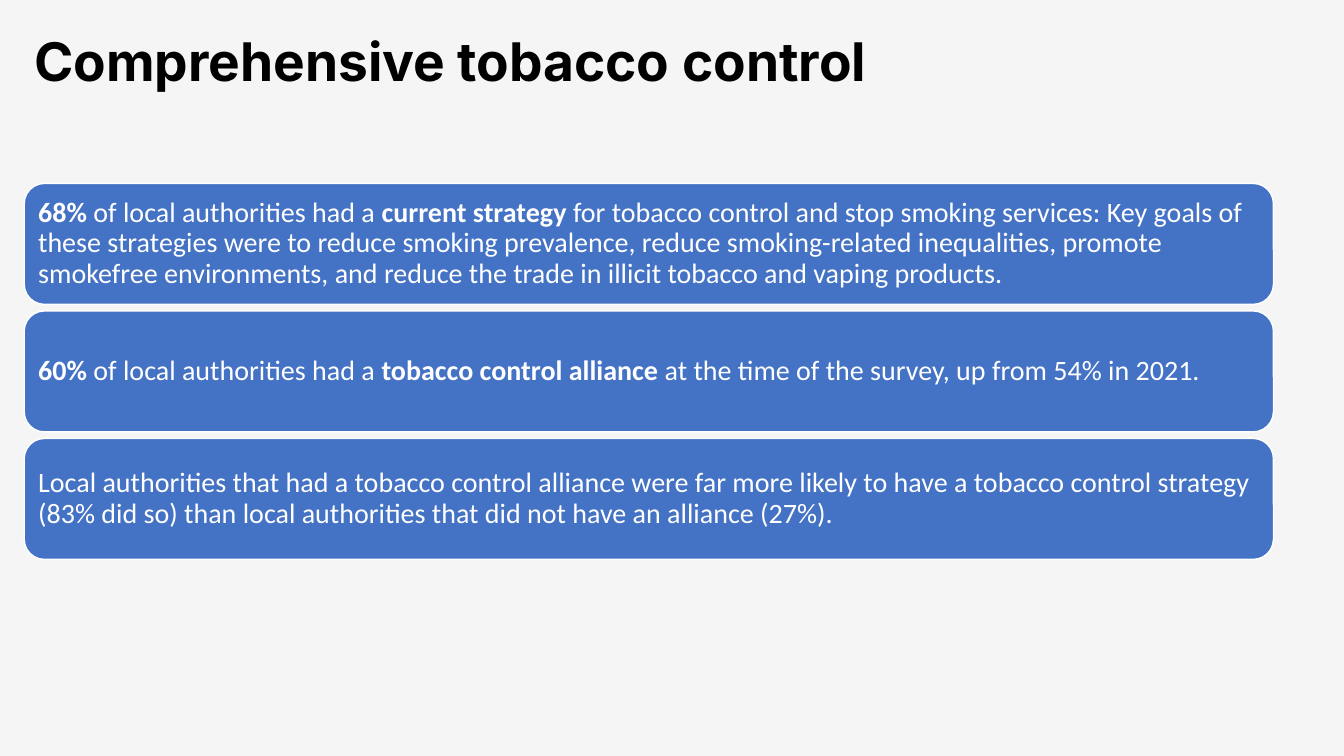
from dataclasses import dataclass

from pptx import Presentation, util as u
from pptx.dml import color
from pptx.enum import shapes, text


@dataclass(frozen=True)
class Theme:
    back: str = "F5F5F5"
    ink: str = "000000"
    card: str = "4472C4"
    light: str = "FFFFFF"
    head: str = "Inter"
    body: str = "Calibri"
    large: int = 38
    small: int = 20


@dataclass(frozen=True)
class Run:
    words: str
    bold: bool = False


@dataclass(frozen=True)
class Card:
    runs: tuple[Run, ...]


THEME = Theme()

# Card geometry, in inches
LEFT, WIDE, HIGH = 0.24, 12.39, 1.2
FIRST, LAST = 1.82, 4.35

CARDS = (
    Card((
        Run("68% ", True),
        Run("of local authorities had a "),
        Run("current strategy ", True),
        Run("for tobacco control and stop smoking services: Key goals of these "
            "strategies were to reduce smoking prevalence, reduce smoking-related "
            "inequalities, promote smokefree environments, and reduce the trade in "
            "illicit tobacco and vaping products."),
    )),
    Card((
        Run("60% ", True),
        Run("of local authorities had a "),
        Run("tobacco control alliance ", True),
        Run("at the time of the survey, up from 54% in 2021."),
    )),
    Card((
        Run("Local authorities that had a tobacco control alliance were far more "
            "likely to have a tobacco control strategy (83% did so) than local "
            "authorities that did not have an alliance (27%)."),
    )),
)


def rgb(code: str) -> color.RGBColor:
    return color.RGBColor.from_string(code)


def write(shape, runs: tuple[Run, ...], *, font: str, size: int, ink: str,
          inset: tuple[float, float]) -> None:
    """Fill a shape with one left-aligned, vertically centred paragraph."""
    frame = shape.text_frame
    frame.word_wrap = True
    frame.vertical_anchor = text.MSO_ANCHOR.MIDDLE
    frame.margin_left = frame.margin_right = u.Inches(inset[0])
    frame.margin_top = frame.margin_bottom = u.Inches(inset[1])
    para = frame.paragraphs[0]
    para.alignment = text.PP_ALIGN.LEFT
    para.line_spacing = 0.9
    for run in runs:
        part = para.add_run()
        part.text = run.words
        part.font.name = font
        part.font.size = u.Pt(size)
        part.font.bold = run.bold
        part.font.color.rgb = rgb(ink)


def draw(slide, card: Card, top: float) -> None:
    box = slide.shapes.add_shape(
        shapes.MSO_SHAPE.ROUNDED_RECTANGLE,
        u.Inches(LEFT), u.Inches(top), u.Inches(WIDE), u.Inches(HIGH))
    box.shadow.inherit = False
    box.fill.solid()
    box.fill.fore_color.rgb = rgb(THEME.card)
    box.line.color.rgb = rgb(THEME.light)
    box.line.width = u.Pt(1)
    write(box, card.runs, font=THEME.body, size=THEME.small, ink=THEME.light,
          inset=(0.08, 0.08))


def main() -> None:
    deck = Presentation()
    deck.slide_width, deck.slide_height = u.Inches(13.33), u.Inches(7.5)
    slide = deck.slides.add_slide(deck.slide_layouts[6])

    # Background
    slide.background.fill.solid()
    slide.background.fill.fore_color.rgb = rgb(THEME.back)

    # Title
    title = slide.shapes.add_textbox(
        u.Inches(LEFT), u.Inches(0), u.Inches(11.97), u.Inches(1.28))
    write(title, (Run("Comprehensive tobacco control", True),), font=THEME.head,
          size=THEME.large, ink=THEME.ink, inset=(0.1, 0.05))

    # Evenly spaced cards
    step = (LAST - FIRST) / (len(CARDS) - 1)
    for row, card in enumerate(CARDS):
        draw(slide, card, FIRST + row * step)

    deck.save("out.pptx")


if __name__ == "__main__":
    main()
